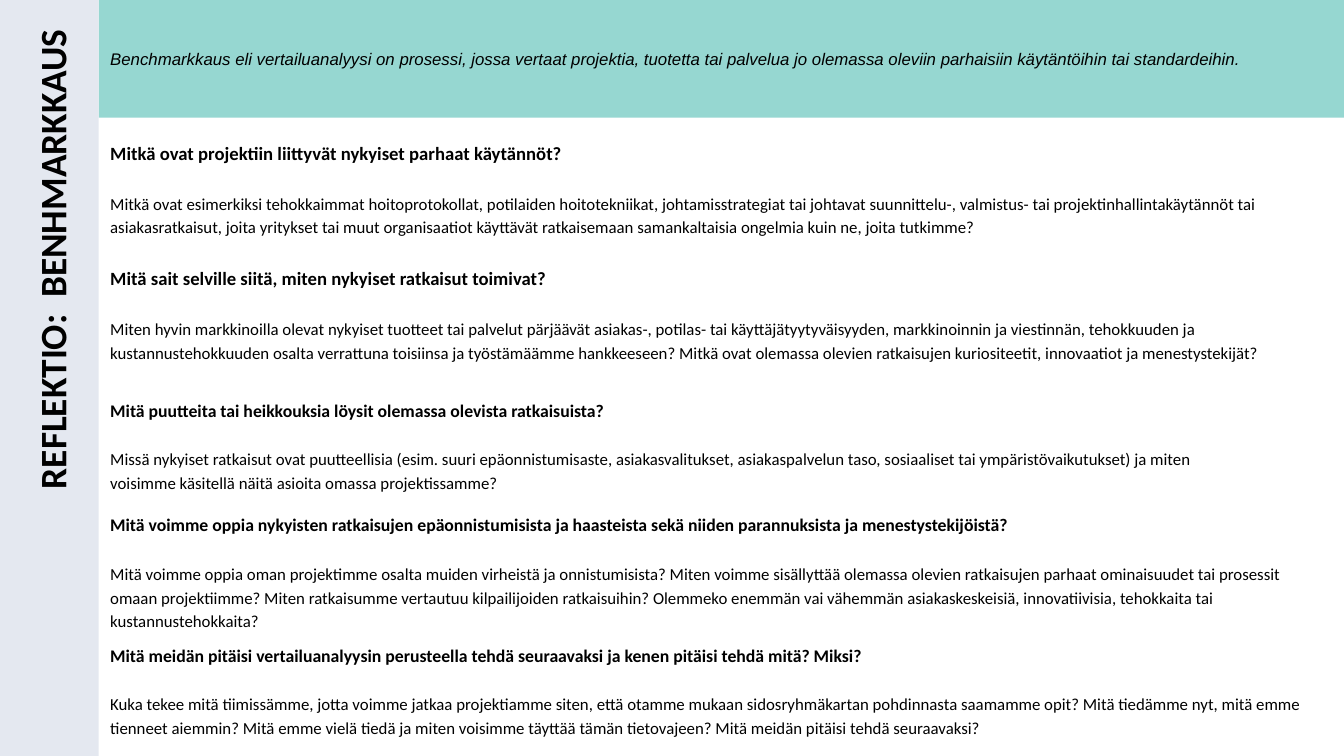
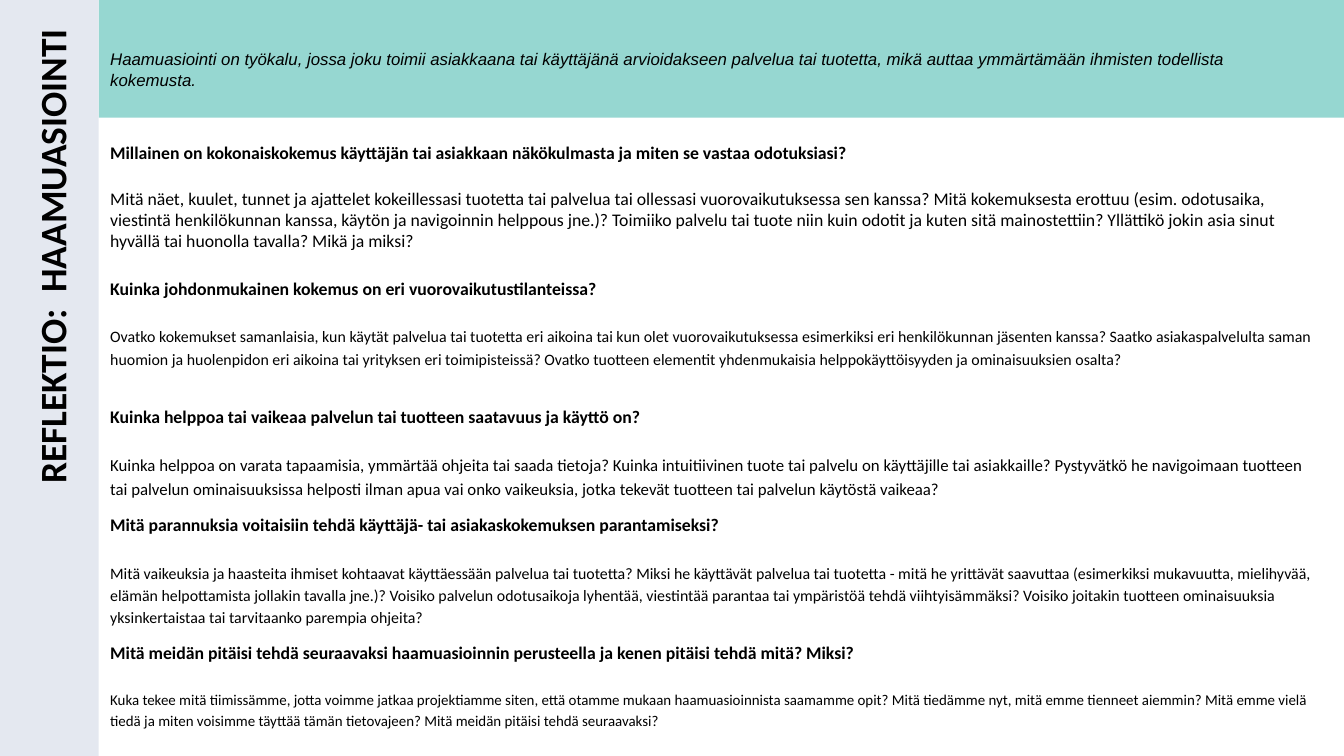
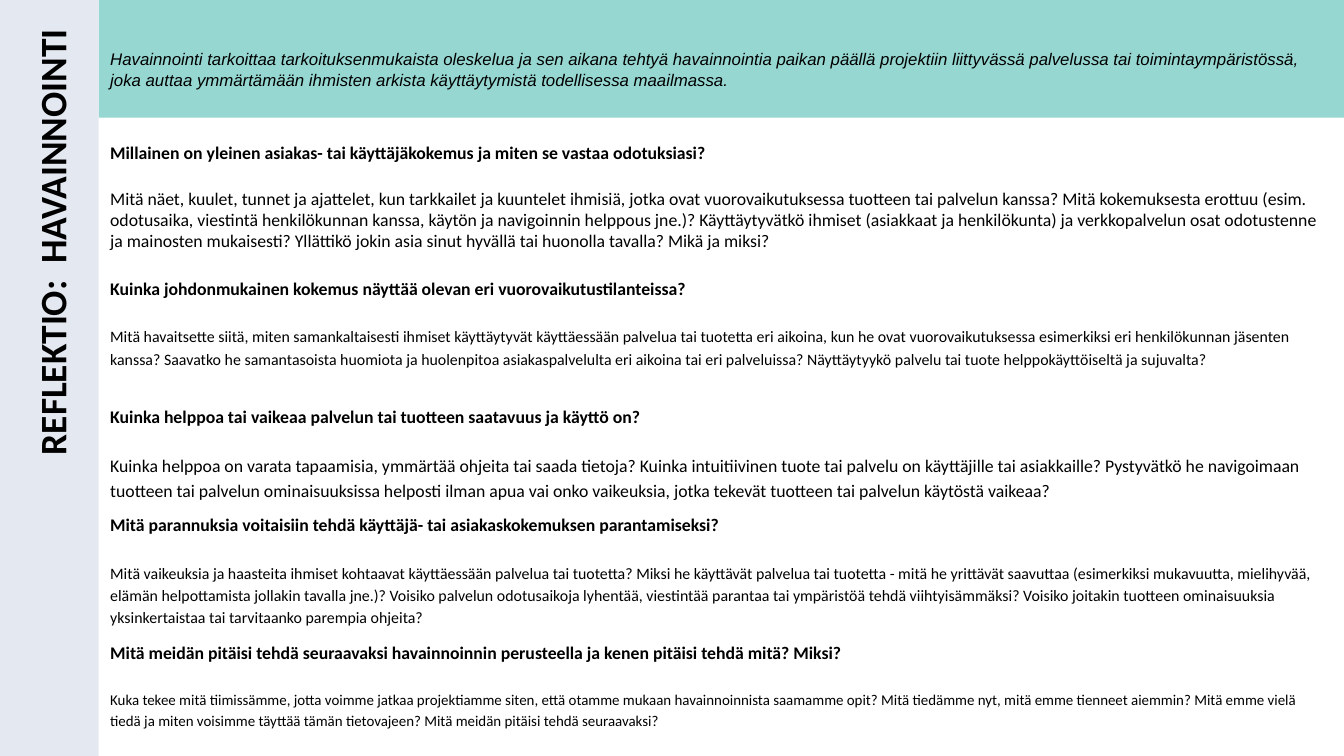
import pptx
import pptx.util
import pptx.dml.color
import pptx.enum.shapes
import pptx.enum.text

COLOURS = {"sidebar": "E4E8F0", "band": "96D7D1", "text": "000000"}
COLUMNS, ROWS = 20, 11.25
SIDEBAR, BAND = 1.47, 1.75
MARGIN = 1.64
LEADING = 1.4


def write(paragraph, text, size, font="Calibri", bold=False, italic=False,
          leading=LEADING, before=0, tracking=0):
    if before:
        paragraph.space_before = pptx.util.Pt(before)
    paragraph.line_spacing = pptx.util.Pt(round(size * leading, 1))
    run = paragraph.add_run()
    run.text = text
    run.font.size = pptx.util.Pt(size)
    run.font.name = font
    run.font.bold = bold
    run.font.italic = italic
    run.font.color.rgb = pptx.dml.color.RGBColor.from_string(COLOURS["text"])
    if tracking:
        run.font._element.set("spc", str(tracking * 100))


class Deck:
    def __init__(self):
        self.presentation = pptx.Presentation()
        self.presentation.slide_width = pptx.util.Inches(20)
        self.presentation.slide_height = pptx.util.Inches(11.25)
        self.column = self.presentation.slide_width / COLUMNS
        self.row = self.presentation.slide_height / ROWS
        self.slide = None

    def place(self, left, top, width, height):
        return (round(left * self.column), round(top * self.row),
                round(width * self.column), round(height * self.row))

    def panel(self, colour, *place):
        panel = self.slide.shapes.add_shape(
            pptx.enum.shapes.MSO_SHAPE.RECTANGLE, *self.place(*place))
        panel.shadow.inherit = False
        panel.fill.solid()
        panel.fill.fore_color.rgb = pptx.dml.color.RGBColor.from_string(COLOURS[colour])
        panel.line.fill.background()

    def box(self, *place):
        box = self.slide.shapes.add_textbox(*self.place(*place))
        frame = box.text_frame
        frame.margin_left = frame.margin_right = 0
        frame.margin_top = frame.margin_bottom = 0
        frame.word_wrap = True
        frame.auto_size = pptx.enum.text.MSO_AUTO_SIZE.SHAPE_TO_FIT_TEXT
        return box

    def title(self, method, length):
        top_end, middle, thickness = 0.44, 0.69, 0.74
        box = self.box(middle - length / 2, top_end + (length - thickness) / 2,
                       length, thickness)
        box.rotation = 270
        line = box.text_frame.paragraphs[0]
        line.alignment = pptx.enum.text.PP_ALIGN.RIGHT
        write(line, "REFLEKTIO:", 40, bold=True)
        write(line, " ", 40, bold=True, tracking=9)
        write(line, method, 40, bold=True)

    def definition(self, text, height):
        box = self.box(MARGIN, 0.73, 17.73, height)
        write(box.text_frame.paragraphs[0], text, 18, font="Arial", italic=True, leading=1.2)

    def question(self, layout, heading, body):
        top, width, height, heading_size, body_size, leading = layout
        frame = self.box(MARGIN, top, width, height).text_frame
        write(frame.paragraphs[0], heading, heading_size, bold=True)
        write(frame.add_paragraph(), body, body_size, leading=leading,
              before=round(heading_size * LEADING, 1))

    def reflection(self, method, definition, layouts, questions,
                   title_length=9.49, definition_height=0.29):
        self.slide = self.presentation.slides.add_slide(self.presentation.slide_layouts[6])
        self.panel("sidebar", 0, 0, SIDEBAR, ROWS)
        self.panel("band", SIDEBAR, 0, COLUMNS - SIDEBAR, BAND)
        self.title(method, title_length)
        self.definition(definition, definition_height)
        for layout, (heading, body) in zip(layouts, questions):
            self.question(layout, heading, body)


def next_steps(basis, source):
    return (
        f"Mitä meidän pitäisi {basis} ja kenen pitäisi tehdä mitä? Miksi?",
        "Kuka tekee mitä tiimissämme, jotta voimme jatkaa projektiamme siten, että otamme mukaan "
        f"{source} saamamme opit? Mitä tiedämme nyt, mitä emme tienneet aiemmin? Mitä emme vielä "
        "tiedä ja miten voisimme täyttää tämän tietovajeen? Mitä meidän pitäisi tehdä seuraavaksi?",
    )


BENCHMARK_LAYOUTS = [
    (2.05, 18.07, 1.45, 20, 18, LEADING),
    (3.92, 17.73, 1.79, 20, 18, LEADING),
    (5.89, 16.95, 1.41, 19, 18, LEADING),
    (7.6, 18.07, 1.75, 19, 18, LEADING),
    (9.54, 18.36, 1.41, 19, 18, LEADING),
]


def experience_layouts(access_height, access_size):
    return [
        (2.05, 18.07, 1.68, 19, 19, 1.2),
        (4.08, 18.07, 1.69, 19, 17, LEADING),
        (5.98, 17.88, access_height, 19, access_size, LEADING),
        (7.6, 18.07, 1.69, 19, 17, LEADING),
        (9.5, 17.98, 1.33, 19, 16, LEADING),
    ]


ACCESS = (
    "Kuinka helppoa tai vaikeaa palvelun tai tuotteen saatavuus ja käyttö on?",
    "Kuinka helppoa on varata tapaamisia, ymmärtää ohjeita tai saada tietoja? Kuinka intuitiivinen "
    "tuote tai palvelu on käyttäjille tai asiakkaille? Pystyvätkö he navigoimaan tuotteen tai "
    "palvelun ominaisuuksissa helposti ilman apua vai onko vaikeuksia, jotka tekevät tuotteen tai "
    "palvelun käytöstä vaikeaa?",
)
IMPROVEMENTS = (
    "Mitä parannuksia voitaisiin tehdä käyttäjä- tai asiakaskokemuksen parantamiseksi?",
    "Mitä vaikeuksia ja haasteita ihmiset kohtaavat käyttäessään palvelua tai tuotetta? Miksi he "
    "käyttävät palvelua tai tuotetta - mitä he yrittävät saavuttaa (esimerkiksi mukavuutta, "
    "mielihyvää, elämän helpottamista jollakin tavalla jne.)? Voisiko palvelun odotusaikoja "
    "lyhentää, viestintää parantaa tai ympäristöä tehdä viihtyisämmäksi? Voisiko joitakin tuotteen "
    "ominaisuuksia yksinkertaistaa tai tarvitaanko parempia ohjeita?",
)

BENCHMARK_QUESTIONS = [
    ("Mitkä ovat projektiin liittyvät nykyiset parhaat käytännöt?",
     "Mitkä ovat esimerkiksi tehokkaimmat hoitoprotokollat, potilaiden hoitotekniikat, "
     "johtamisstrategiat tai johtavat suunnittelu-, valmistus- tai projektinhallintakäytännöt tai "
     "asiakasratkaisut, joita yritykset tai muut organisaatiot käyttävät ratkaisemaan "
     "samankaltaisia ongelmia kuin ne, joita tutkimme?"),
    ("Mitä sait selville siitä, miten nykyiset ratkaisut toimivat?",
     "Miten hyvin markkinoilla olevat nykyiset tuotteet tai palvelut pärjäävät asiakas-, potilas- "
     "tai käyttäjätyytyväisyyden, markkinoinnin ja viestinnän, tehokkuuden ja "
     "kustannustehokkuuden osalta verrattuna toisiinsa ja työstämäämme hankkeeseen? Mitkä ovat "
     "olemassa olevien ratkaisujen kuriositeetit, innovaatiot ja menestystekijät?"),
    ("Mitä puutteita tai heikkouksia löysit olemassa olevista ratkaisuista?",
     "Missä nykyiset ratkaisut ovat puutteellisia (esim. suuri epäonnistumisaste, "
     "asiakasvalitukset, asiakaspalvelun taso, sosiaaliset tai ympäristövaikutukset) ja miten "
     "voisimme käsitellä näitä asioita omassa projektissamme?"),
    ("Mitä voimme oppia nykyisten ratkaisujen epäonnistumisista ja haasteista sekä niiden "
     "parannuksista ja menestystekijöistä?",
     "Mitä voimme oppia oman projektimme osalta muiden virheistä ja onnistumisista? Miten voimme "
     "sisällyttää olemassa olevien ratkaisujen parhaat ominaisuudet tai prosessit omaan "
     "projektiimme? Miten ratkaisumme vertautuu kilpailijoiden ratkaisuihin? Olemmeko enemmän vai "
     "vähemmän asiakaskeskeisiä, innovatiivisia, tehokkaita tai kustannustehokkaita?"),
    next_steps("vertailuanalyysin perusteella tehdä seuraavaksi",
               "sidosryhmäkartan pohdinnasta"),
]

MYSTERY_VISIT_QUESTIONS = [
    ("Millainen on kokonaiskokemus käyttäjän tai asiakkaan näkökulmasta ja miten se vastaa "
     "odotuksiasi?",
     "Mitä näet, kuulet, tunnet ja ajattelet kokeillessasi tuotetta tai palvelua tai ollessasi "
     "vuorovaikutuksessa sen kanssa? Mitä kokemuksesta erottuu (esim. odotusaika, viestintä "
     "henkilökunnan kanssa, käytön ja navigoinnin helppous jne.)? Toimiiko palvelu tai tuote niin "
     "kuin odotit ja kuten sitä mainostettiin? Yllättikö jokin asia sinut hyvällä tai huonolla "
     "tavalla? Mikä ja miksi?"),
    ("Kuinka johdonmukainen kokemus on eri vuorovaikutustilanteissa?",
     "Ovatko kokemukset samanlaisia, kun käytät palvelua tai tuotetta eri aikoina tai kun olet "
     "vuorovaikutuksessa esimerkiksi eri henkilökunnan jäsenten kanssa? Saatko asiakaspalvelulta "
     "saman huomion ja huolenpidon eri aikoina tai yrityksen eri toimipisteissä? Ovatko tuotteen "
     "elementit yhdenmukaisia helppokäyttöisyyden ja ominaisuuksien osalta?"),
    ACCESS,
    IMPROVEMENTS,
    next_steps("tehdä seuraavaksi haamuasioinnin perusteella", "haamuasioinnista"),
]

OBSERVATION_QUESTIONS = [
    ("Millainen on yleinen asiakas- tai käyttäjäkokemus ja miten se vastaa odotuksiasi?",
     "Mitä näet, kuulet, tunnet ja ajattelet, kun tarkkailet ja kuuntelet ihmisiä, jotka ovat "
     "vuorovaikutuksessa tuotteen tai palvelun kanssa? Mitä kokemuksesta erottuu (esim. "
     "odotusaika, viestintä henkilökunnan kanssa, käytön ja navigoinnin helppous jne.)? "
     "Käyttäytyvätkö ihmiset (asiakkaat ja henkilökunta) ja verkkopalvelun osat odotustenne ja "
     "mainosten mukaisesti? Yllättikö jokin asia sinut hyvällä tai huonolla tavalla? Mikä ja "
     "miksi?"),
    ("Kuinka johdonmukainen kokemus näyttää olevan eri vuorovaikutustilanteissa?",
     "Mitä havaitsette siitä, miten samankaltaisesti ihmiset käyttäytyvät käyttäessään palvelua "
     "tai tuotetta eri aikoina, kun he ovat vuorovaikutuksessa esimerkiksi eri henkilökunnan "
     "jäsenten kanssa? Saavatko he samantasoista huomiota ja huolenpitoa asiakaspalvelulta eri "
     "aikoina tai eri palveluissa? Näyttäytyykö palvelu tai tuote helppokäyttöiseltä ja "
     "sujuvalta?"),
    ACCESS,
    IMPROVEMENTS,
    next_steps("tehdä seuraavaksi havainnoinnin perusteella", "havainnoinnista"),
]


def main():
    deck = Deck()
    deck.reflection(
        "BENHMARKKAUS",
        "Benchmarkkaus eli vertailuanalyysi on prosessi, jossa vertaat projektia, tuotetta tai "
        "palvelua jo olemassa oleviin parhaisiin käytäntöihin tai standardeihin.",
        BENCHMARK_LAYOUTS, BENCHMARK_QUESTIONS)
    deck.reflection(
        "HAAMUASIOINTI",
        "Haamuasiointi on työkalu, jossa joku toimii asiakkaana tai käyttäjänä arvioidakseen "
        "palvelua tai tuotetta, mikä auttaa ymmärtämään ihmisten todellista kokemusta.",
        experience_layouts(1.41, 18), MYSTERY_VISIT_QUESTIONS)
    deck.reflection(
        "HAVAINNOINTI",
        "Havainnointi tarkoittaa tarkoituksenmukaista oleskelua ja sen aikana tehtyä havainnointia "
        "paikan päällä projektiin liittyvässä palvelussa tai toimintaympäristössä, joka auttaa "
        "ymmärtämään ihmisten arkista käyttäytymistä todellisessa maailmassa.",
        experience_layouts(1.79, 19), OBSERVATION_QUESTIONS,
        title_length=10.03, definition_height=0.58)
    deck.presentation.save("out.pptx")


if __name__ == "__main__":
    main()
